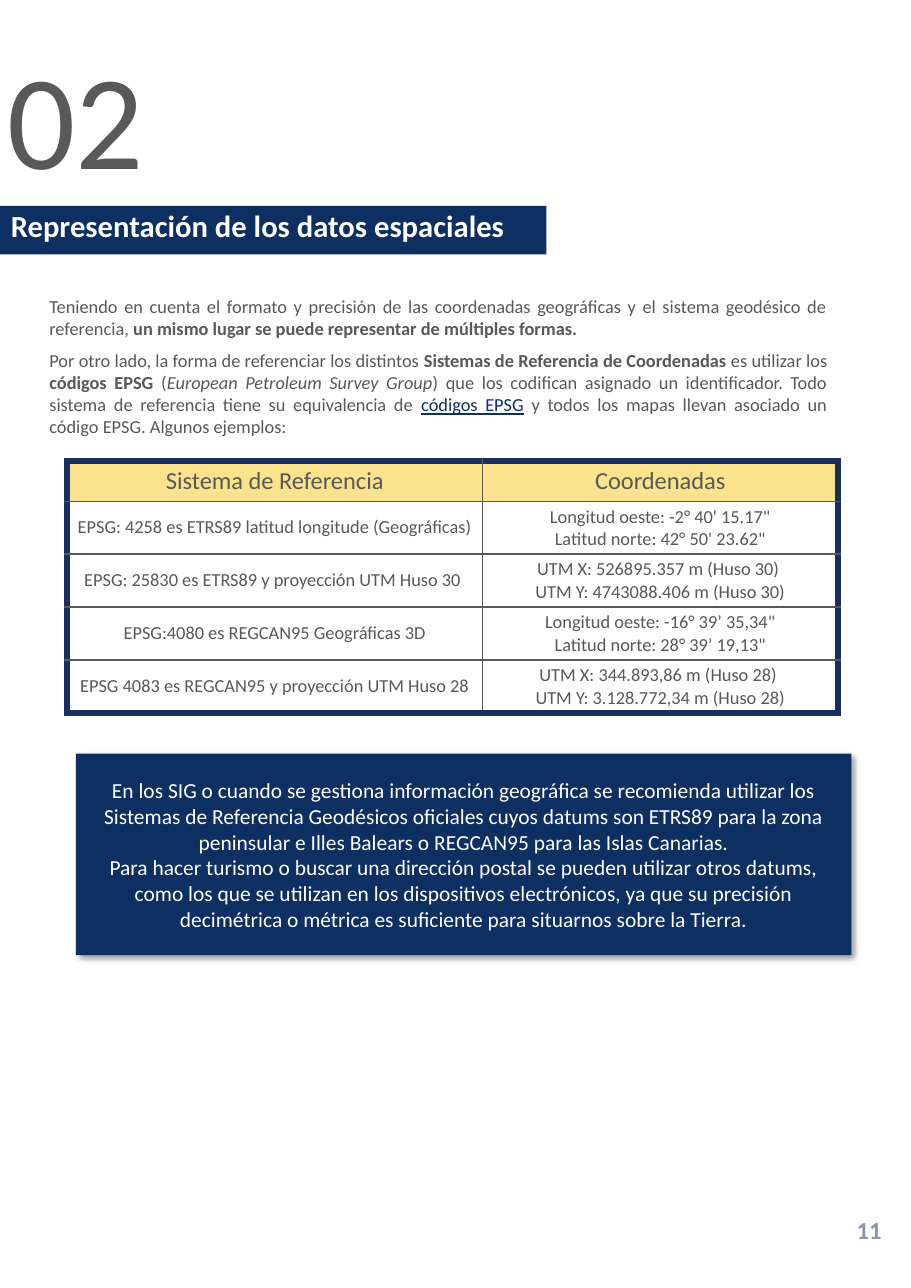
from lxml import etree
from pptx import Presentation
from pptx.dml.color import RGBColor
from pptx.enum import shapes, text
from pptx.oxml import ns
from pptx.util import Inches, Pt

HUES = {
    "navy": "0E2F62", "edge": "172F5E", "gray": "595959",
    "gold": "FBE28C", "page": "8996AE", "white": "FFFFFF", "black": "000000",
}
LEFT, MID = text.PP_ALIGN.LEFT, text.PP_ALIGN.CENTER
RIGHT, FULL = text.PP_ALIGN.RIGHT, text.PP_ALIGN.JUSTIFY

INTRO = [
    ("Teniendo en cuenta el formato y precisión de las coordenadas geográficas "
     "y el sistema geodésico de referencia, ", ""),
    ("un mismo lugar se puede representar de múltiples formas.", "b"),
]
CODES = [
    ("Por otro lado, la forma de referenciar los distintos ", ""),
    ("Sistemas de Referencia de Coordenadas", "b"),
    (" es utilizar los ", ""),
    ("códigos EPSG", "b"),
    (" (", ""),
    ("European Petroleum Survey Group", "i"),
    (") que los codifican asignado un identificador. Todo sistema de referencia "
     "tiene su equivalencia de ", ""),
    ("códigos EPSG", "u"),
    (" y todos los mapas llevan asociado un código EPSG. Algunos ejemplos:", ""),
]
ROWS = [
    (["Sistema de Referencia"], ["Coordenadas"]),
    (["EPSG: 4258 es ETRS89 latitud longitude (Geográficas)"],
     ["Longitud oeste: -2° 40' 15.17\"", "Latitud norte: 42° 50' 23.62\""]),
    (["EPSG: 25830 es ETRS89 y proyección UTM Huso 30 "],
     ["UTM X: 526895.357 m (Huso 30) ", "UTM Y: 4743088.406 m (Huso 30)"]),
    (["EPSG:4080 es REGCAN95 Geográficas 3D"],
     ["Longitud oeste: -16° 39’ 35,34\"", "Latitud norte: 28° 39’ 19,13\""]),
    (["EPSG 4083 es REGCAN95 y proyección UTM Huso 28"],
     ["UTM X: 344.893,86 m (Huso 28) ", "UTM Y: 3.128.772,34 m (Huso 28)"]),
]
ADVICE = [
    "En los SIG o cuando se gestiona información geográfica se recomienda utilizar "
    "los Sistemas de Referencia Geodésicos oficiales cuyos datums son ETRS89 para la "
    "zona peninsular e Illes Balears o REGCAN95 para las Islas Canarias.",
    "Para hacer turismo o buscar una dirección postal se pueden utilizar otros datums, "
    "como los que se utilizan en los dispositivos electrónicos, ya que su precisión "
    "decimétrica o métrica es suficiente para situarnos sobre la Tierra.",
]


def color(name):
    return RGBColor.from_string(HUES[name])


def node(parent, tag, **attrs):
    return etree.SubElement(parent, ns.qn(tag), {k: str(v) for k, v in attrs.items()})


def plain(lines, style=""):
    return [[(line, style)] for line in lines]


def write(frame, paras, size, hue, align, lead=None):
    for i, runs in enumerate(paras):
        para = frame.add_paragraph() if i else frame.paragraphs[0]
        para.alignment = align
        if lead:
            para.line_spacing = lead
        for words, style in runs:
            run = para.add_run()
            run.text = words
            font = run.font
            font.name, font.size = "Calibri", Pt(size)
            font.bold, font.italic = "b" in style, "i" in style
            font.underline = "u" in style
            font.color.rgb = color("navy" if "u" in style else hue)


def label(slide, at, paras, size, hue, align, lead=None, side=0.1):
    frame = slide.shapes.add_textbox(*map(Inches, at)).text_frame
    frame.word_wrap = True
    frame.margin_left = frame.margin_right = Inches(side)
    write(frame, paras, size, hue, align, lead)


def panel(slide, at, paras, size, align, anchor, lead=None):
    box = slide.shapes.add_shape(shapes.MSO_SHAPE.RECTANGLE, *map(Inches, at))
    box.shadow.inherit = False
    box.fill.solid()
    box.fill.fore_color.rgb = color("navy")
    box.line.fill.background()
    box.text_frame.word_wrap = True
    box.text_frame.vertical_anchor = anchor
    write(box.text_frame, paras, size, "white", align, lead)
    return box


def shade(box):
    effects = box._element.spPr.find(ns.qn("a:effectLst"))
    cast = node(effects, "a:outerShdw", blurRad=Pt(4), dist=Pt(3),
                dir=45 * 60000, algn="tl", rotWithShape=0)
    tint = node(cast, "a:srgbClr", val=HUES["black"])
    node(tint, "a:alpha", val=40000)


def border(cell, outer):
    props = cell._tc.get_or_add_tcPr()
    for side in "LRTB":
        hue, width = ("edge", 4.5) if side in outer else ("gray", 1)
        line = node(props, f"a:ln{side}", w=Pt(width))
        node(node(line, "a:solidFill"), "a:srgbClr", val=HUES[hue])


def grid(slide):
    at = map(Inches, (0.61, 4.18, 7, 2.29))
    table = slide.shapes.add_table(len(ROWS), 2, *at).table
    for col, width in zip(table.columns, (3.77, 3.23)):
        col.width = Inches(width)
    for r, row in enumerate(ROWS):
        head = r == 0
        table.rows[r].height = Inches(0.37 if head else 0.48)
        for c, lines in enumerate(row):
            cell = table.cell(r, c)
            outer = "LR"[c] + ("T" if head else "")
            outer += "B" if r == len(ROWS) - 1 else ""
            border(cell, outer)
            if head:
                cell.fill.solid()
                cell.fill.fore_color.rgb = color("gold")
            else:
                cell.fill.background()
                cell.vertical_anchor = text.MSO_ANCHOR.MIDDLE
                cell.margin_left = cell.margin_right = Inches(0.08)
                cell.margin_top = cell.margin_bottom = Inches(0.04)
            write(cell.text_frame, plain(lines), 16 if head else 12, "gray", MID)


def main():
    deck = Presentation()
    deck.slide_width, deck.slide_height = Inches(8.27), Inches(11.69)
    slide = deck.slides.add_slide(deck.slide_layouts[6])
    label(slide, (7.51, 10.98, 0.59, 0.37), plain(["11"], "b"), 16, "page", RIGHT)
    panel(slide, (0, 1.87, 4.96, 0.44),
          plain(["Representación de los datos espaciales"], "b"),
          20, LEFT, text.MSO_ANCHOR.TOP, 0.9)
    label(slide, (0.06, 0.43, 1.26, 1), plain(["02"]), 88, "gray", MID, 0.9, 0)
    label(slide, (0.35, 2.63, 7.26, 0.5), [INTRO], 12, "gray", FULL)
    grid(slide)
    label(slide, (0.35, 3.12, 7.26, 0.91), [CODES], 12, "gray", FULL)
    shade(panel(slide, (0.69, 6.84, 7.04, 1.83), plain(ADVICE),
                14, MID, text.MSO_ANCHOR.MIDDLE))
    deck.save("out.pptx")


if __name__ == "__main__":
    main()
